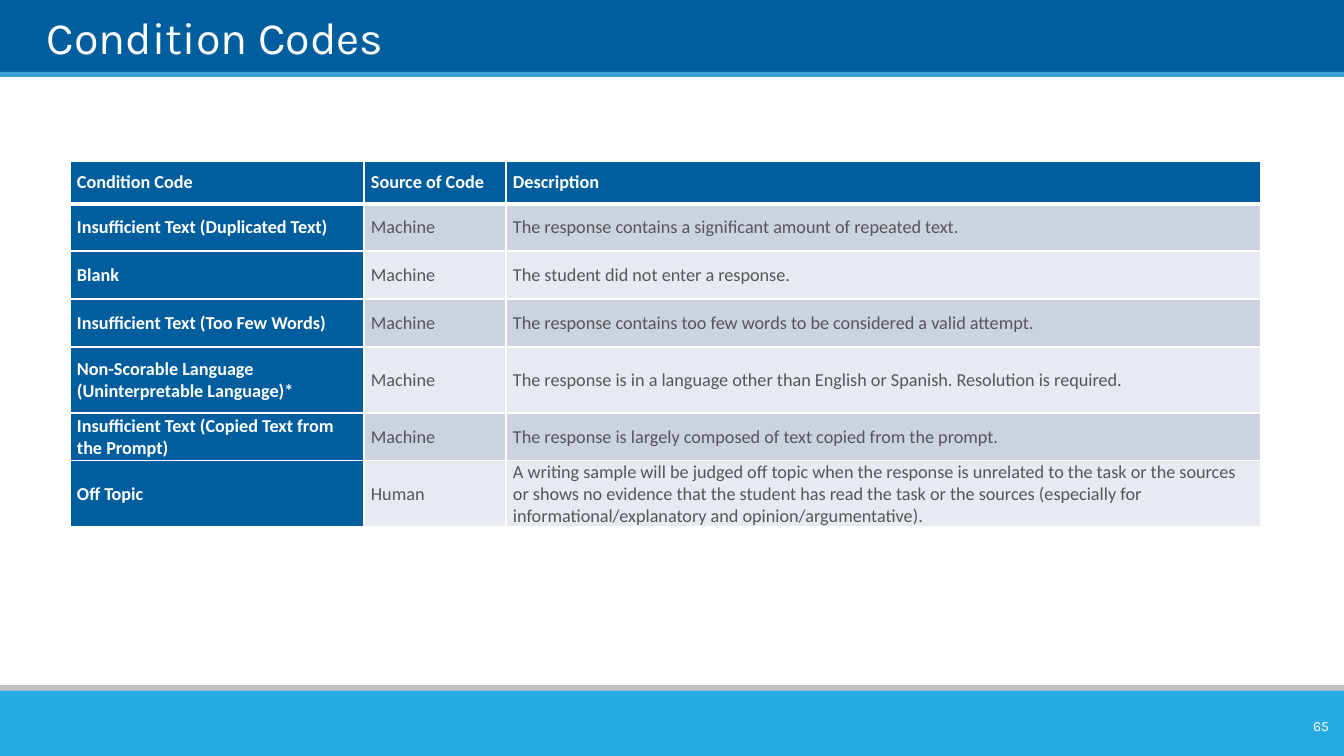
from pptx import Presentation
from pptx.dml.color import RGBColor as RGB
from pptx.enum.shapes import MSO_SHAPE as Shape
from pptx.enum.text import MSO_ANCHOR as Anchor, PP_ALIGN as Align
from pptx.oxml.ns import qn
from pptx.util import Emu, Pt
from lxml.etree import SubElement as Sub

TITLE = "Condition Codes"
NUMBER = "65"
HEAD = ("Condition Code", "Source of Code", "Description")
CODES = [
    ("Insufficient Text (Duplicated Text)", "Machine",
     "The response contains a significant amount of repeated text."),
    ("Blank", "Machine", "The student did not enter a response."),
    ("Insufficient Text (Too Few Words)", "Machine",
     "The response contains too few words to be considered a valid attempt."),
    ("Non-Scorable Language (Uninterpretable Language)*", "Machine",
     "The response is in a language other than English or Spanish. "
     "Resolution is required."),
    ("Insufficient Text (Copied Text from the Prompt)", "Machine",
     "The response is largely composed of text copied from the prompt."),
    ("Off Topic", "Human",
     "A writing sample will be judged off topic when the response is unrelated "
     "to the task or the sources or shows no evidence that the student has read "
     "the task or the sources (especially for informational/explanatory and "
     "opinion/argumentative)."),
]

THEME = {
    "white": "FFFFFF", "navy": "005E9E", "text": "53565A",
    "bands": ("CCD2DF", "E7EAF0"),
    "display": "Karla", "body": "Calibri",
    "title": 32, "cell": 13, "number": 10,
    "rule": 1, "thick": 3,
}

# Lengths in px
WIDTH, HEIGHT = 1344, 756
BARS = [  # top, height, colour
    (-1, 76, THEME["navy"]),
    (72, 5, "35A0CE"),
    (685, 14, "BFBFBF"),
    (691, 65, "27AAE1"),
]
TITLE_BOX = (47, 7, 1253, 57)
NUMBER_BOX = (1261, 711, 78, 30)
LEFT, TOP = 70, 161
COLS = (294, 142, 755)
ROWS = (43, 47, 48, 48, 66, 48, 66)
PAD = 7


def px(n):
    return Emu(round(n * 914400 / 100.8))


def put(item, **values):
    for name, value in values.items():
        setattr(item, name, value)


def style(para, face, size, color, bold=False):
    put(para.font, name=face, size=Pt(size), bold=bold)
    para.font.color.rgb = RGB.from_string(color)


def paint(fill, color):
    fill.solid()
    fill.fore_color.rgb = RGB.from_string(color)


def bar(slide, top, height, color):
    shape = slide.shapes.add_shape(
        Shape.RECTANGLE, 0, px(top), px(WIDTH), px(height))
    shape.shadow.inherit = False
    paint(shape.fill, color)
    shape.line.fill.background()


def label(slide, box, text, size, **frame):
    area = slide.shapes.add_textbox(*map(px, box)).text_frame
    put(area, word_wrap=True, **frame)
    para = area.paragraphs[0]
    para.text = text
    style(para, THEME["display"], size, THEME["white"])
    return para


def edge(cell, widths):
    """Draw white cell borders; widths maps each side to points."""
    props = cell._tc.get_or_add_tcPr()
    for side, width in widths.items():
        line = Sub(props, qn("a:ln" + side), w=str(Pt(width)))
        Sub(Sub(line, qn("a:solidFill")), qn("a:srgbClr"), val=THEME["white"])


def grid(slide):
    rows = [HEAD, *CODES]
    table = slide.shapes.add_table(
        len(rows), len(COLS), px(LEFT), px(TOP),
        px(sum(COLS)), px(sum(ROWS))).table
    table.horz_banding = False
    for col, width in zip(table.columns, COLS):
        col.width = px(width)
    thin, thick = THEME["rule"], THEME["thick"]
    for r, (row, texts) in enumerate(zip(table.rows, rows)):
        row.height = px(ROWS[r])
        for c, text in enumerate(texts):
            cell = table.cell(r, c)
            strong = r == 0 or c == 0
            put(cell, text=text, vertical_anchor=Anchor.MIDDLE,
                margin_left=px(PAD), margin_right=px(PAD),
                margin_top=0, margin_bottom=0)
            edge(cell, {"L": thin, "R": thin,
                        "T": thick if r == 1 else thin,
                        "B": thick if r == 0 else thin})
            paint(cell.fill,
                  THEME["navy"] if strong else THEME["bands"][(r - 1) % 2])
            style(cell.text_frame.paragraphs[0], THEME["body"], THEME["cell"],
                  THEME["white"] if strong else THEME["text"], strong)


def main():
    deck = Presentation()
    put(deck, slide_width=px(WIDTH), slide_height=px(HEIGHT))
    slide = deck.slides.add_slide(deck.slide_layouts[6])
    for spot in BARS:
        bar(slide, *spot)
    label(slide, TITLE_BOX, TITLE, THEME["title"],
          vertical_anchor=Anchor.BOTTOM, margin_left=0, margin_right=0,
          margin_top=0, margin_bottom=0)
    grid(slide)
    number = label(slide, NUMBER_BOX, NUMBER, THEME["number"],
                   vertical_anchor=Anchor.MIDDLE)
    number.alignment = Align.RIGHT
    deck.save("out.pptx")


if __name__ == "__main__":
    main()
